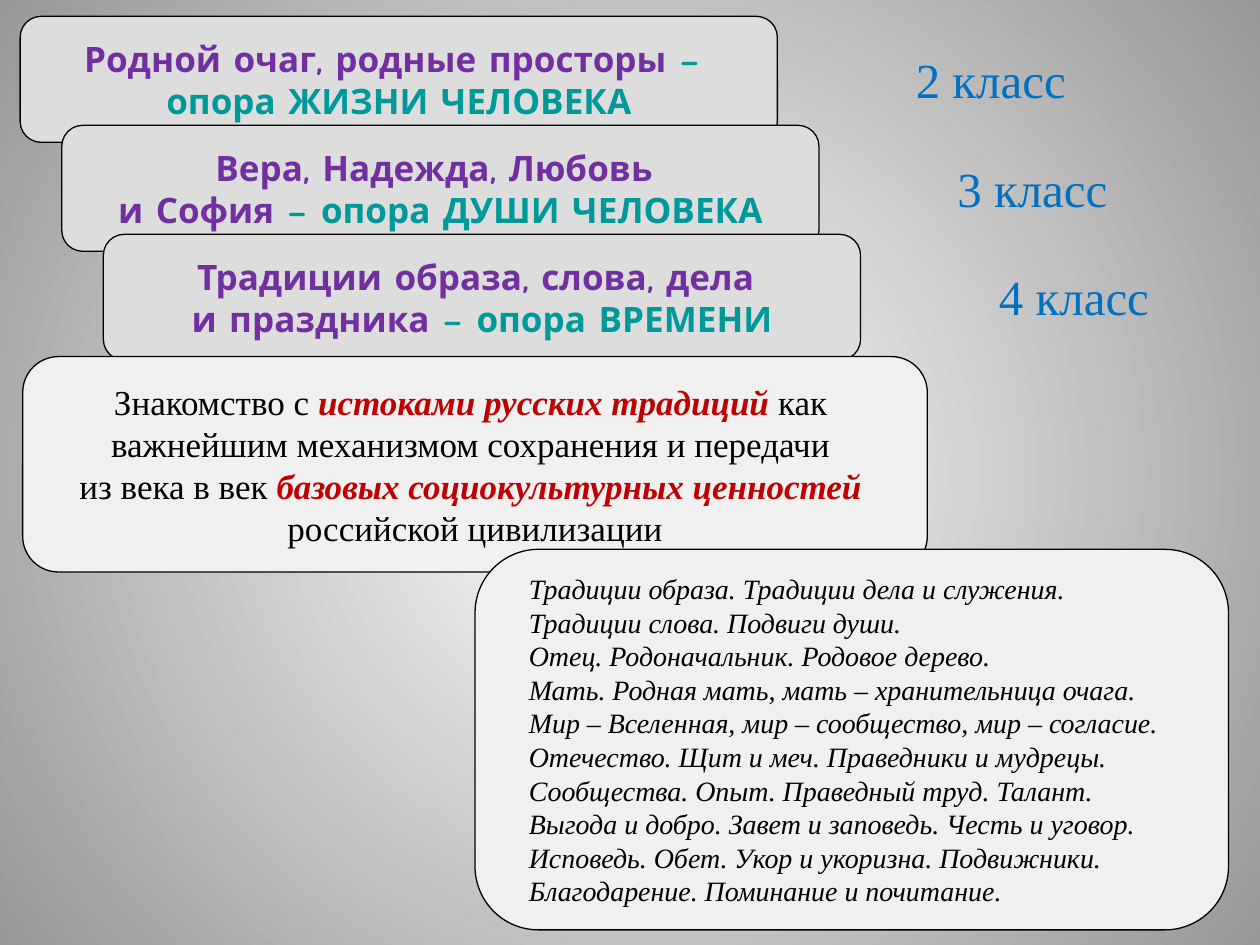
"""Build a slide of stepped class themes with two summary panels."""
from lxml.etree import fromstring
from pptx import Presentation
from pptx.dml.color import RGBColor
from pptx.enum.shapes import MSO_SHAPE
from pptx.enum.text import MSO_ANCHOR, PP_ALIGN
from pptx.util import Inches, Pt

COLORS = {
    "black": "000000", "step": "DDDDDD", "panel": "F0F0F0", "purple": "7030A0",
    "teal": "009999", "blue": "0070C0", "red": "C00000",
    "center": "FFFFFF", "edge": "979797",
}
BACKGROUND = """<p:bg xmlns:p="http://schemas.openxmlformats.org/presentationml/2006/main"
 xmlns:a="http://schemas.openxmlformats.org/drawingml/2006/main"><p:bgPr>
<a:gradFill rotWithShape="1"><a:gsLst>
<a:gs pos="0"><a:srgbClr val="{center}"/></a:gs>
<a:gs pos="100000"><a:srgbClr val="{edge}"/></a:gs></a:gsLst>
<a:path path="circle"><a:fillToRect l="50000" t="50000" r="50000" b="50000"/></a:path>
</a:gradFill><a:effectLst/></p:bgPr></p:bg>"""

STEP_LEFT, STEP_TOP, STEP_RIGHT, STEP_DOWN = 0.16, 0.13, 0.33, 0.865
LABEL_LEFT, LABEL_TOP = 7.17, 0.34
STEPS = [
    ("2 класс", [[("Родной очаг, родные просторы ", "purple"), ("– ", "teal")],
                 [("опора ЖИЗНИ ЧЕЛОВЕКА", "teal")]]),
    ("3 класс", [[("Вера, Надежда, Любовь ", "purple")],
                 [("и София ", "purple"), ("– опора ДУШИ ЧЕЛОВЕКА", "teal")]]),
    ("4 класс", [[("Традиции образа, слова, дела ", "purple")],
                 [("и праздника ", "purple"), ("– опора ВРЕМЕНИ", "teal")]]),
]
PURPOSE = [
    [("Знакомство с ", "black"), ("истоками русских традиций ", "red"), ("как ", "black")],
    [("важнейшим механизмом сохранения и передачи ", "black")],
    [("из века в век ", "black"), ("базовых социокультурных ценностей ", "red")],
    [("российской цивилизации", "black")],
]
TOPICS = [
    "Традиции образа. Традиции дела и служения.",
    "Традиции слова. Подвиги души.",
    "Отец. Родоначальник. Родовое дерево.",
    "Мать. Родная мать, мать – хранительница очага.",
    "Мир – Вселенная, мир – сообщество, мир – согласие.",
    "Отечество. Щит и меч. Праведники и мудрецы.",
    "Сообщества. Опыт. Праведный труд. Талант.",
    "Выгода и добро. Завет и заповедь. Честь и уговор.",
    "Исповедь. Обет. Укор и укоризна. Подвижники.",
    "Благодарение. Поминание и почитание.",
]


def add_span(para, text, color="black", size=20, font="Times New Roman", bold=False, italic=False):
    """Append formatted text to a paragraph."""
    span = para.add_run()
    span.text = text
    span.font.name = font
    span.font.size = Pt(size)
    span.font.bold = bold
    span.font.italic = italic
    span.font.color.rgb = RGBColor.from_string(COLORS[color])


def add_paragraph(frame, index, align):
    """Return the paragraph at the end of a frame, reusing the first one."""
    para = frame.add_paragraph() if index else frame.paragraphs[0]
    para.alignment = align
    return para


class SlideStyle:
    """Holds the style and the current page."""

    def __init__(self, page):
        self.page = page
        self.line_width = Pt(0.75)

    def background(self):
        """Set the round gradient behind the page."""
        content = self.page.element.cSld
        content.insert(0, fromstring(BACKGROUND.format(**COLORS)))

    def card(self, left, top, width, height, fill, wrap=False, indent=0):
        """Add a rounded card and return its text frame."""
        box = self.page.shapes.add_shape(
            MSO_SHAPE.ROUNDED_RECTANGLE, Inches(left), Inches(top), Inches(width), Inches(height))
        box.shadow.inherit = False
        box.fill.solid()
        box.fill.fore_color.rgb = RGBColor.from_string(COLORS[fill])
        box.line.color.rgb = RGBColor.from_string(COLORS["black"])
        box.line.width = self.line_width
        frame = box.text_frame
        frame.word_wrap = wrap
        frame.vertical_anchor = MSO_ANCHOR.MIDDLE
        frame.margin_left = Inches(indent)
        frame.margin_top = frame.margin_right = frame.margin_bottom = 0
        return frame

    def step(self, left, top, lines):
        """Add a theme card with bold two-colour text."""
        frame = self.card(left, top, 6.01, 1, "step")
        for index, line in enumerate(lines):
            para = add_paragraph(frame, index, PP_ALIGN.CENTER)
            for text, color in line:
                add_span(para, text, color=color, font="Comic Neue", bold=True)

    def label(self, left, top, text):
        """Add a class label."""
        box = self.page.shapes.add_textbox(Inches(left), Inches(top), Inches(1.4), Inches(0.57))
        box.text_frame.word_wrap = False
        add_span(box.text_frame.paragraphs[0], text, color="blue", size=28)

    def purpose(self, lines):
        """Add the panel whose red words are emphasised."""
        frame = self.card(0.18, 2.83, 7.18, 1.71, "panel")
        for index, line in enumerate(lines):
            para = add_paragraph(frame, index, PP_ALIGN.CENTER)
            for text, color in line:
                strong = color == "red"
                add_span(para, text, color=color, bold=strong, italic=strong)

    def topics(self, lines):
        """Add the panel of topics in italics."""
        frame = self.card(3.77, 4.36, 5.98, 3.02, "panel", wrap=True, indent=0.28)
        for index, text in enumerate(lines):
            add_span(add_paragraph(frame, index, PP_ALIGN.LEFT), text, size=16, italic=True)


def main():
    """Build and save the deck."""
    deck = Presentation()
    deck.slide_width, deck.slide_height = Inches(10), Inches(7.5)
    style = SlideStyle(deck.slides.add_slide(deck.slide_layouts[6]))
    style.background()
    for index, (label, lines) in enumerate(STEPS):
        right, down = index * STEP_RIGHT, index * STEP_DOWN
        style.step(STEP_LEFT + right, STEP_TOP + down, lines)
        style.label(LABEL_LEFT + right, LABEL_TOP + down, label)
    style.purpose(PURPOSE)
    style.topics(TOPICS)
    deck.save("out.pptx")


if __name__ == "__main__":
    main()
